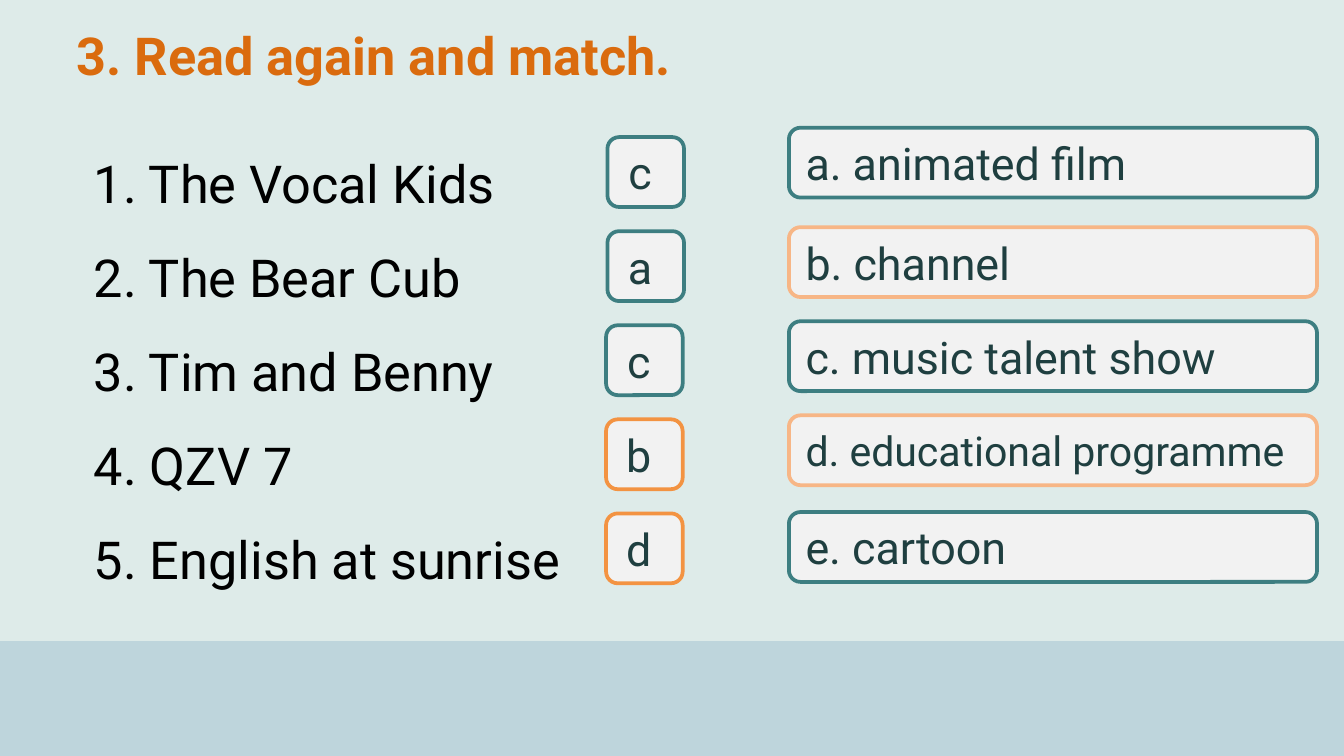
import pptx
import pptx.util
from pptx.dml.color import RGBColor
from pptx.enum.shapes import MSO_SHAPE
from pptx.enum.text import MSO_ANCHOR, MSO_AUTO_SIZE, PP_ALIGN
from pptx.util import Inches

FONT = "Roboto"
BACKGROUND = RGBColor(0xDE, 0xEB, 0xE9)
BAND = RGBColor(0xBE, 0xD5, 0xDC)
TITLE = RGBColor(0xDA, 0x6B, 0x0E)
BLACK = RGBColor(0, 0, 0)
CARD = RGBColor(0xF2, 0xF2, 0xF2)
CARD_TEXT = RGBColor(0x1F, 0x3F, 0x40)
TEAL = RGBColor(0x3D, 0x7E, 0x81)
PEACH = RGBColor(0xF7, 0xB6, 0x86)
ORANGE = RGBColor(0xF3, 0x93, 0x42)

CARD_HEIGHT = 0.52
PROGRAMMES = ["1. The Vocal Kids", "2. The Bear Cub", "3. Tim and Benny",
              "4. QZV 7", "5. English at sunrise"]
# text, left offset, border
ANSWERS = [("c ", 0.01, TEAL), ("a ", 0.01, TEAL), ("c ", 0, TEAL),
           ("b ", 0, ORANGE), ("d ", 0, ORANGE)]
# text, top offset, border, text size
OPTIONS = [("a. animated film", 0, TEAL, 24), ("b. channel", 0.74, PEACH, 24),
           ("c. music talent show", 1.44, TEAL, 24),
           ("d. educational programme", 2.14, PEACH, 22),
           ("e. cartoon", 2.86, TEAL, 24)]


def write_text(sp, *lines, size=24, color=CARD_TEXT, bold=False,
               align=PP_ALIGN.LEFT, anchor=MSO_ANCHOR.MIDDLE, spacing=None):
    tf = sp.text_frame
    tf.word_wrap = True
    tf.vertical_anchor = anchor
    for i, line in enumerate(lines):
        p = tf.paragraphs[0] if i == 0 else tf.add_paragraph()
        p.alignment = align
        p.line_spacing = spacing
        r = p.add_run()
        r.text = line
        r.font.name = FONT
        r.font.size = pptx.util.Pt(size)
        r.font.bold = bold
        r.font.color.rgb = color


def add_box(s, kind, left, top, width, height, fill=None, border=None):
    sp = s.shapes.add_shape(kind, Inches(left), Inches(top), Inches(width), Inches(height))
    sp.shadow.inherit = False
    if fill is None:
        sp.fill.background()
    else:
        sp.fill.solid()
        sp.fill.fore_color.rgb = fill
    if border is None:
        sp.line.fill.background()
    else:
        sp.line.color.rgb = border
        sp.line.width = pptx.util.Pt(2)
    return sp


def add_backdrop(s):
    s.background.fill.solid()
    s.background.fill.fore_color.rgb = BACKGROUND
    add_box(s, MSO_SHAPE.RECTANGLE, -0.01, 4.77, 10.04, 0.86, BAND)


def add_title(s, left, top, width, height):
    sp = add_box(s, MSO_SHAPE.ROUNDED_RECTANGLE, left, top, width, height)
    write_text(sp, "3. Read again and match. ", size=28, color=TITLE, bold=True,
               align=PP_ALIGN.CENTER)


def add_programmes(s, left, top, width, height):
    sp = s.shapes.add_textbox(Inches(left), Inches(top), Inches(width), Inches(height))
    write_text(sp, *PROGRAMMES, size=28, color=BLACK, anchor=MSO_ANCHOR.TOP, spacing=1.5)
    sp.text_frame.auto_size = MSO_AUTO_SIZE.SHAPE_TO_FIT_TEXT


def add_options(s, left, top, width):
    for text, offset, border, size in OPTIONS:
        sp = add_box(s, MSO_SHAPE.ROUNDED_RECTANGLE, left, top + offset, width,
                     CARD_HEIGHT, CARD, border)
        write_text(sp, text, size=size)


def add_answers(s, left, top, width, pitch):
    for i, (text, offset, border) in enumerate(ANSWERS):
        sp = add_box(s, MSO_SHAPE.ROUNDED_RECTANGLE, left + offset, top + i * pitch,
                     width, CARD_HEIGHT, CARD, border)
        write_text(sp, text, align=PP_ALIGN.CENTER)


def main():
    prs = pptx.Presentation()
    prs.slide_width = Inches(10)
    prs.slide_height = prs.slide_width * 9 // 16
    s = prs.slides.add_slide(prs.slide_layouts[6])
    add_backdrop(s)
    add_title(s, 0.25, 0.15, 5.16, 0.52)
    add_programmes(s, 0.6, 0.84, 4.32, 3.57)
    add_options(s, 5.87, 0.95, 3.93)
    add_answers(s, 4.51, 1.02, 0.57, 0.7)
    prs.save("out.pptx")


if __name__ == "__main__":
    main()
